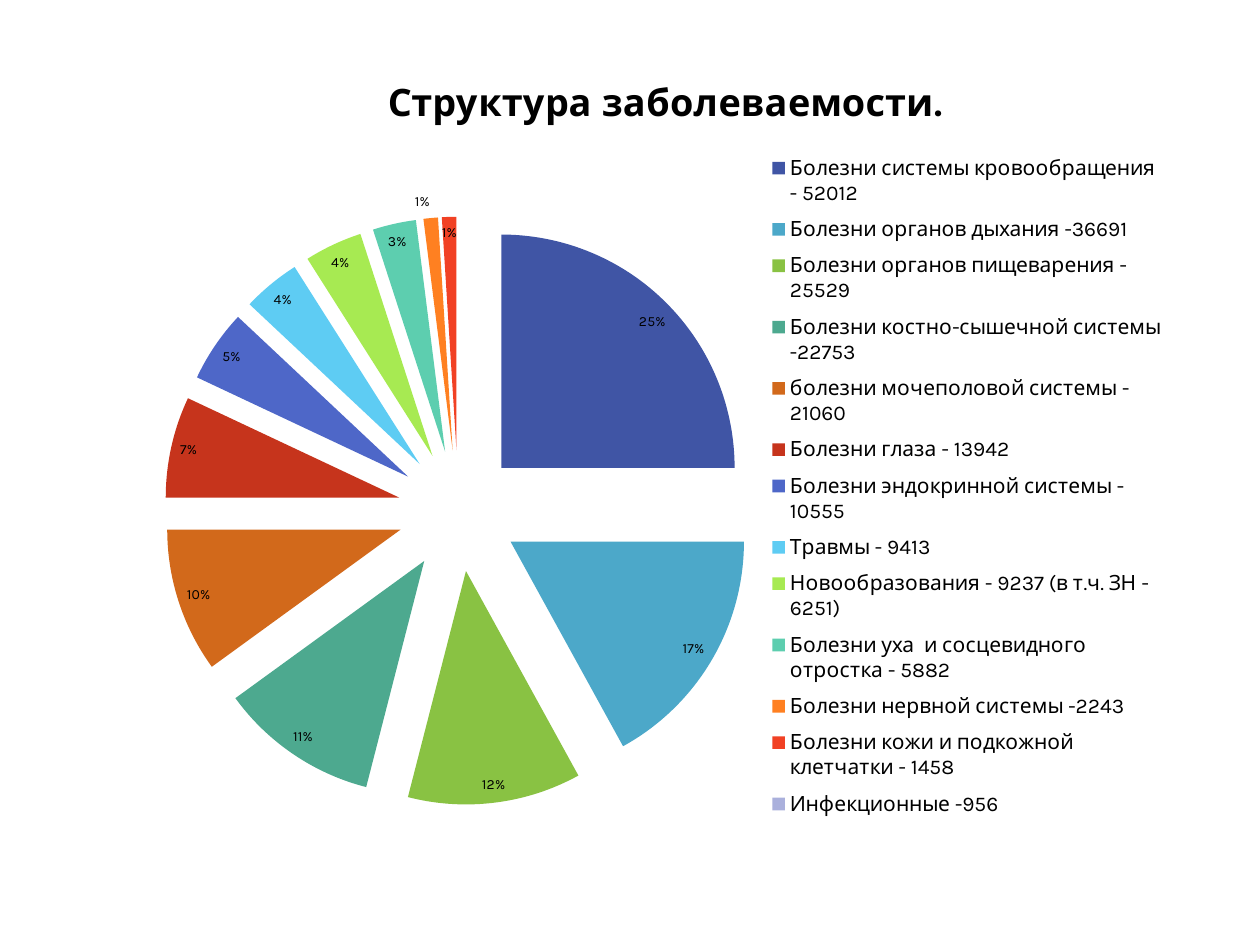
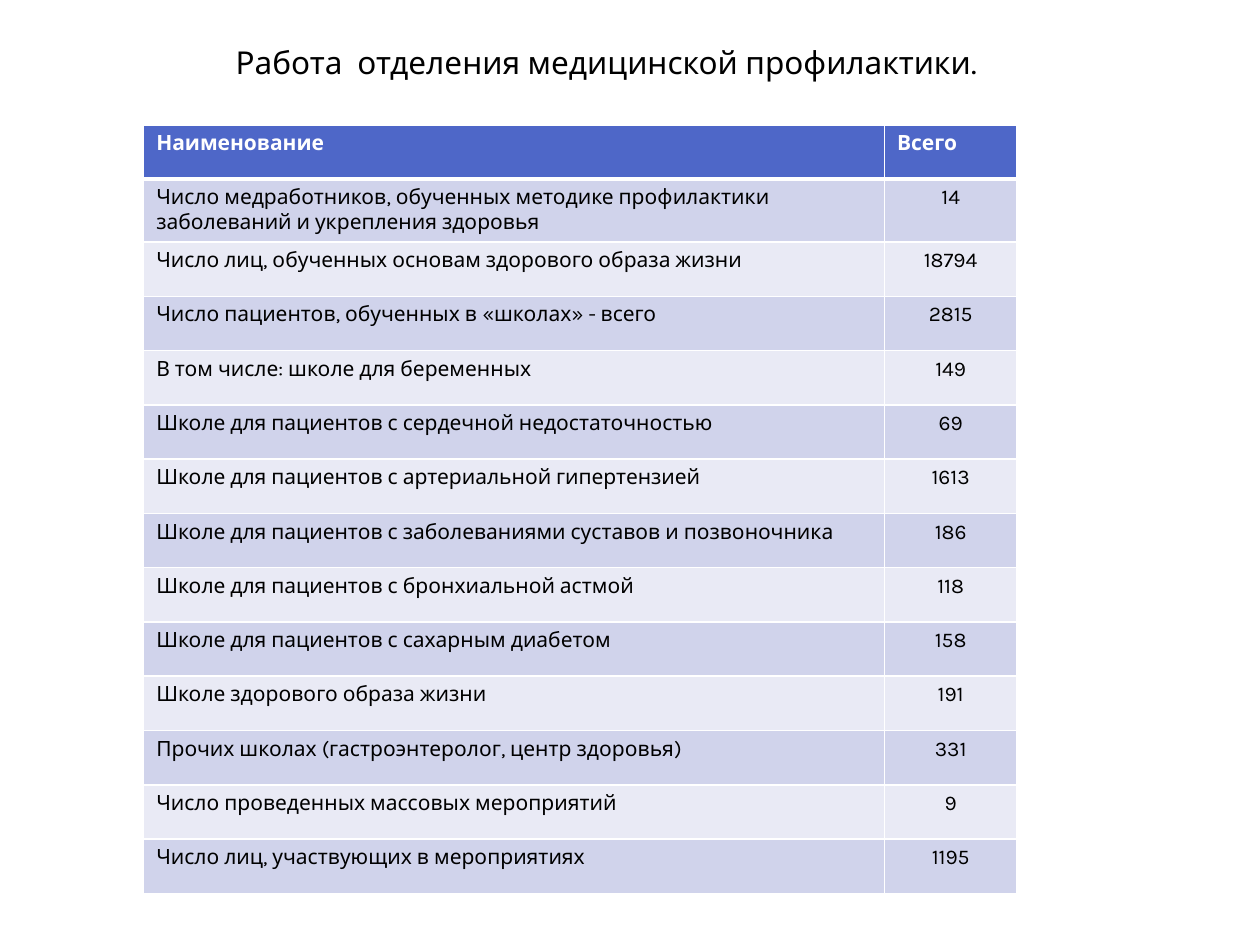
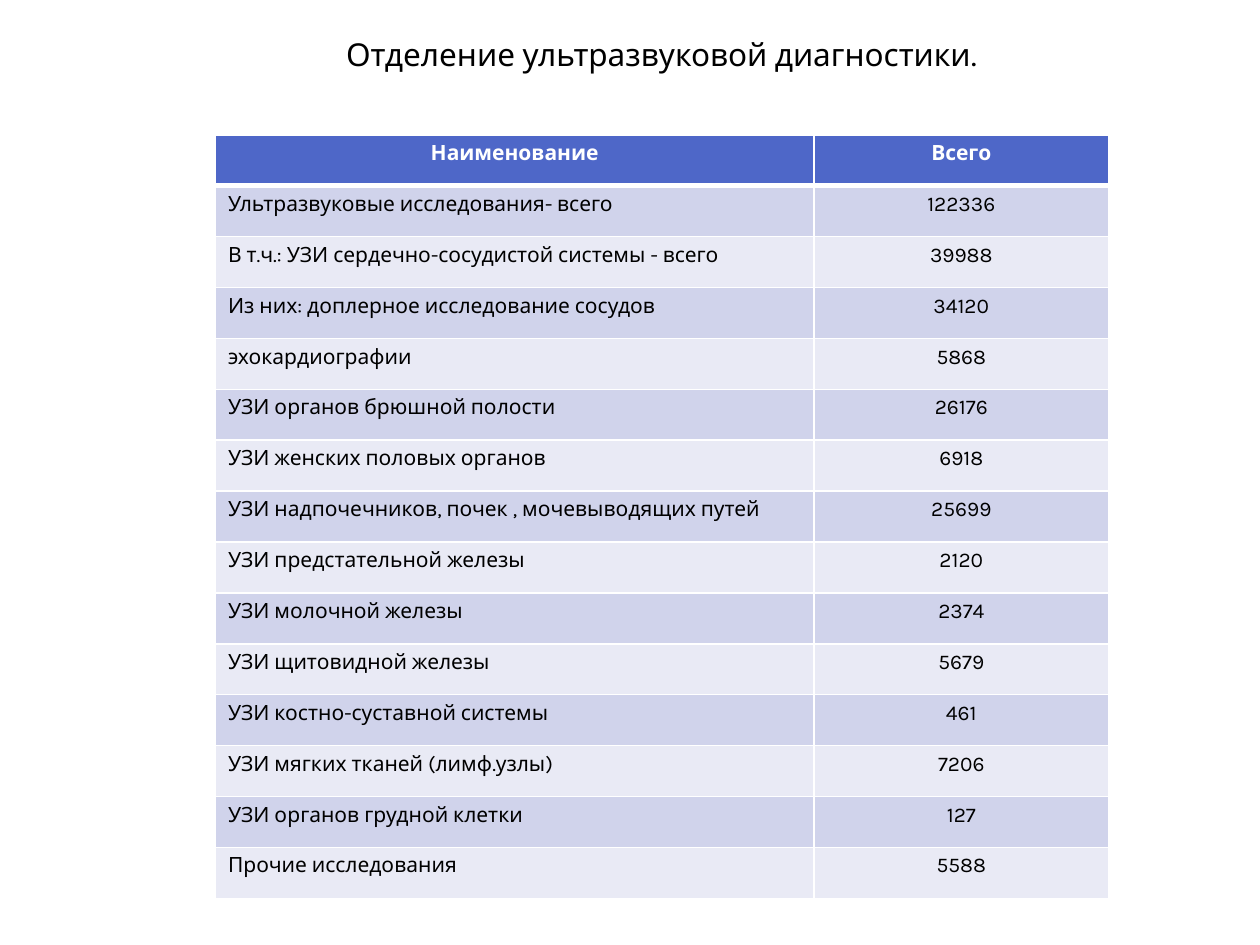
from lxml import etree
from pptx import Presentation
from pptx.chart.data import CategoryChartData
from pptx.dml.color import RGBColor
from pptx.enum.chart import XL_CHART_TYPE, XL_LABEL_POSITION, XL_LEGEND_POSITION
from pptx.enum.text import MSO_ANCHOR, MSO_AUTO_SIZE, PP_ALIGN
from pptx.oxml import parse_xml
from pptx.oxml.ns import nsdecls, qn
from pptx.util import Inches, Pt

# Shared style
FONT = "Karla"
BLACK = RGBColor(0x00, 0x00, 0x00)
WHITE = RGBColor(0xFF, 0xFF, 0xFF)
HEADER = RGBColor(0x4E, 0x67, 0xC8)
BAND_DARK = RGBColor(0xD0, 0xD3, 0xEB)
BAND_LIGHT = RGBColor(0xE9, 0xEA, 0xF5)
SLICES = [RGBColor.from_string(c) for c in (
    "4055A5", "4CA8C9", "89C243", "4DA98F", "D2691B", "C6341C", "4E67C8",
    "5ECCF3", "A7EA52", "5DCEAF", "FF8021", "F14124", "AAB0DC")]
TITLE_ONLY, BLANK = 5, 6

# Slide content: diseases with their share in percent
DISEASES = [
    ("Болезни системы кровообращения - 52012", 25),
    ("Болезни органов дыхания -36691", 17),
    ("Болезни органов пищеварения - 25529", 12),
    ("Болезни костно-сышечной системы -22753", 11),
    ("болезни мочеполовой системы - 21060", 10),
    ("Болезни глаза - 13942", 7),
    ("Болезни эндокринной системы - 10555", 5),
    ("Травмы - 9413", 4),
    ("Новообразования - 9237 (в т.ч. ЗН - 6251)", 4),
    ("Болезни уха  и сосцевидного отростка - 5882", 3),
    ("Болезни нервной системы -2243", 1),
    ("Болезни кожи и подкожной клетчатки - 1458", 1),
    ("Инфекционные -956", 0),
]
COLUMNS = ("Наименование", "Всего")
PREVENTION = [
    ("Число медработников, обученных методике профилактики "
     "заболеваний и укрепления здоровья", 14),
    ("Число лиц, обученных основам здорового образа жизни", 18794),
    ("Число пациентов, обученных в «школах» - всего", 2815),
    ("В том числе: школе для беременных", 149),
    ("Школе для пациентов с сердечной недостаточностью", 69),
    ("Школе для пациентов с артериальной гипертензией", 1613),
    ("Школе для пациентов с заболеваниями суставов и позвоночника", 186),
    ("Школе для пациентов с бронхиальной астмой", 118),
    ("Школе для пациентов с сахарным диабетом", 158),
    ("Школе здорового образа жизни", 191),
    ("Прочих школах (гастроэнтеролог, центр здоровья)", 331),
    ("Число проведенных массовых мероприятий", 9),
    ("Число лиц, участвующих в мероприятиях", 1195),
]
ULTRASOUND = [
    ("Ультразвуковые исследования- всего", 122336),
    ("В т.ч.: УЗИ сердечно-сосудистой системы - всего", 39988),
    ("Из них: доплерное исследование сосудов", 34120),
    ("эхокардиографии", 5868),
    ("УЗИ органов брюшной полости", 26176),
    ("УЗИ женских половых органов", 6918),
    ("УЗИ надпочечников, почек , мочевыводящих путей", 25699),
    ("УЗИ предстательной железы", 2120),
    ("УЗИ молочной железы", 2374),
    ("УЗИ щитовидной железы", 5679),
    ("УЗИ костно-суставной системы", 461),
    ("УЗИ мягких тканей (лимф.узлы)", 7206),
    ("УЗИ органов грудной клетки", 127),
    ("Прочие исследования", 5588),
]


def set_font(font, size, color=BLACK, bold=False):
    font.name, font.size, font.bold = FONT, Pt(size), bold
    font.color.rgb = color


def set_layout(parent, inner=False, **fractions):
    """Place a chart part by fractions of the chart area."""
    for old in parent.findall(qn("c:layout")):
        parent.remove(old)
    layout = parse_xml(f"<c:layout {nsdecls('c')}><c:manualLayout/></c:layout>")
    manual = layout[0]
    if inner:
        etree.SubElement(manual, qn("c:layoutTarget")).set("val", "inner")
    for key in ("x", "y"):
        etree.SubElement(manual, qn(f"c:{key}Mode")).set("val", "edge")
    for key, value in fractions.items():
        etree.SubElement(manual, qn(f"c:{key}")).set("val", str(value))
    before = [e for tag in ("c:tx", "c:legendPos")
              for e in parent.findall(qn(tag))]
    if before:
        before[-1].addnext(layout)
    else:
        parent.insert(0, layout)


def set_borders(cell, top=1, bottom=1):
    tcPr = cell._tc.get_or_add_tcPr()
    for side, width in (("L", 1), ("R", 1), ("T", top), ("B", bottom)):
        ln = etree.SubElement(tcPr, qn(f"a:ln{side}"), w=str(Pt(width)))
        fill = etree.SubElement(ln, qn("a:solidFill"))
        etree.SubElement(fill, qn("a:srgbClr"), val=str(WHITE))


class Deck:
    def __init__(self):
        self.prs = Presentation()
        self.prs.slide_width, self.prs.slide_height = Inches(10), Inches(7.5)

    def slide(self, layout):
        self.s = self.prs.slides.add_slide(self.prs.slide_layouts[layout])

    def title(self, text, x, y, w, align=PP_ALIGN.LEFT):
        sp = self.s.shapes.title
        sp.left, sp.top, sp.width, sp.height = map(Inches, (x, y, w, 0.4))
        tf = sp.text_frame
        tf.text = text
        tf.word_wrap = True
        tf.auto_size = MSO_AUTO_SIZE.SHAPE_TO_FIT_TEXT
        tf.vertical_anchor = MSO_ANCHOR.TOP
        p = tf.paragraphs[0]
        p.alignment = align
        set_font(p.font, 18)

    def table(self, rows, x, y, widths, height, first_extra=0,
              head_align=PP_ALIGN.CENTER):
        rows = [COLUMNS, *rows]
        tbl = self.s.shapes.add_table(
            len(rows), len(widths), Inches(x), Inches(y),
            Inches(sum(widths)), Inches(height)).table
        for col, width in zip(tbl.columns, widths):
            col.width = Inches(width)
        row_height = Inches((height - first_extra) / len(rows))
        for i, row in enumerate(rows):
            tbl.rows[i].height = row_height + Inches(first_extra if i == 1 else 0)
            for j, value in enumerate(row):
                self.cell(tbl.cell(i, j), i, j, str(value), head_align)

    def cell(self, cell, i, j, text, head_align):
        head = i == 0
        set_borders(cell, top=3 if i == 1 else 1, bottom=3 if head else 1)
        cell.fill.solid()
        cell.fill.fore_color.rgb = (
            HEADER if head else BAND_DARK if i % 2 else BAND_LIGHT)
        cell.text = text
        p = cell.text_frame.paragraphs[0]
        if head:
            p.alignment = head_align
        else:
            p.alignment = PP_ALIGN.CENTER if j else PP_ALIGN.LEFT
        set_font(p.font, 12, WHITE if head else BLACK, head)

    def pie(self, title, items, x, y, w, h):
        data = CategoryChartData()
        data.categories = [name for name, _ in items]
        data.add_series(title, [share for _, share in items])
        chart = self.s.shapes.add_chart(
            XL_CHART_TYPE.PIE, *map(Inches, (x, y, w, h)), data).chart
        set_font(chart.font, 18)

        # Title and legend
        chart.has_title = True
        tf = chart.chart_title.text_frame
        tf.text = title
        set_font(tf.paragraphs[0].font, 21.6, bold=True)
        chart.chart_title.include_in_layout = False
        set_layout(chart.chart_title._element, x=0.23, y=0.03)
        chart.has_legend = True
        chart.legend.position = XL_LEGEND_POSITION.RIGHT
        chart.legend.include_in_layout = False
        set_font(chart.legend.font, 12)
        set_layout(chart.legend._element, x=0.62, y=0.12, w=0.38, h=0.83)

        # Exploded slices
        plot = chart.plots[0]
        plot.vary_by_categories = True
        set_layout(chart._chartSpace.chart.plotArea, inner=True,
                   x=0.02, y=0.15, w=0.57, h=0.83)
        series = plot.series[0]
        for i, color in enumerate(SLICES):
            fill = series.points[i].format.fill
            fill.solid()
            fill.fore_color.rgb = color
        explosion = parse_xml(f'<c:explosion {nsdecls("c")} val="26"/>')
        series._element.find(qn("c:dPt")).addprevious(explosion)

        # Percent labels, none on the last slice
        labels = series.data_labels
        labels.show_percentage, labels.show_value = True, False
        labels.position = XL_LABEL_POSITION.BEST_FIT
        set_font(labels.font, 8)
        labels._element.insert(0, parse_xml(
            f'<c:dLbl {nsdecls("c")}><c:idx val="{len(items) - 1}"/>'
            '<c:delete val="1"/></c:dLbl>'))


def main():
    deck = Deck()

    # Disease structure
    deck.slide(BLANK)
    deck.pie("Структура заболеваемости.", DISEASES, 1.14, 0.36, 8.19, 6.54)

    # Prevention department
    deck.slide(TITLE_ONLY)
    deck.title("Работа  отделения медицинской профилактики.", 1.77, 0.29, 7.24)
    deck.table(PREVENTION, 1.14, 0.99, (5.88, 1.05), 6.1, first_extra=0.07,
               head_align=PP_ALIGN.LEFT)

    # Ultrasound department
    deck.slide(TITLE_ONLY)
    deck.title("Отделение ультразвуковой диагностики.", 1.47, 0.23, 7.56,
               PP_ALIGN.CENTER)
    deck.table(ULTRASOUND, 1.71, 1.07, (4.75, 2.34), 6.06)

    deck.prs.save("out.pptx")


if __name__ == "__main__":
    main()
